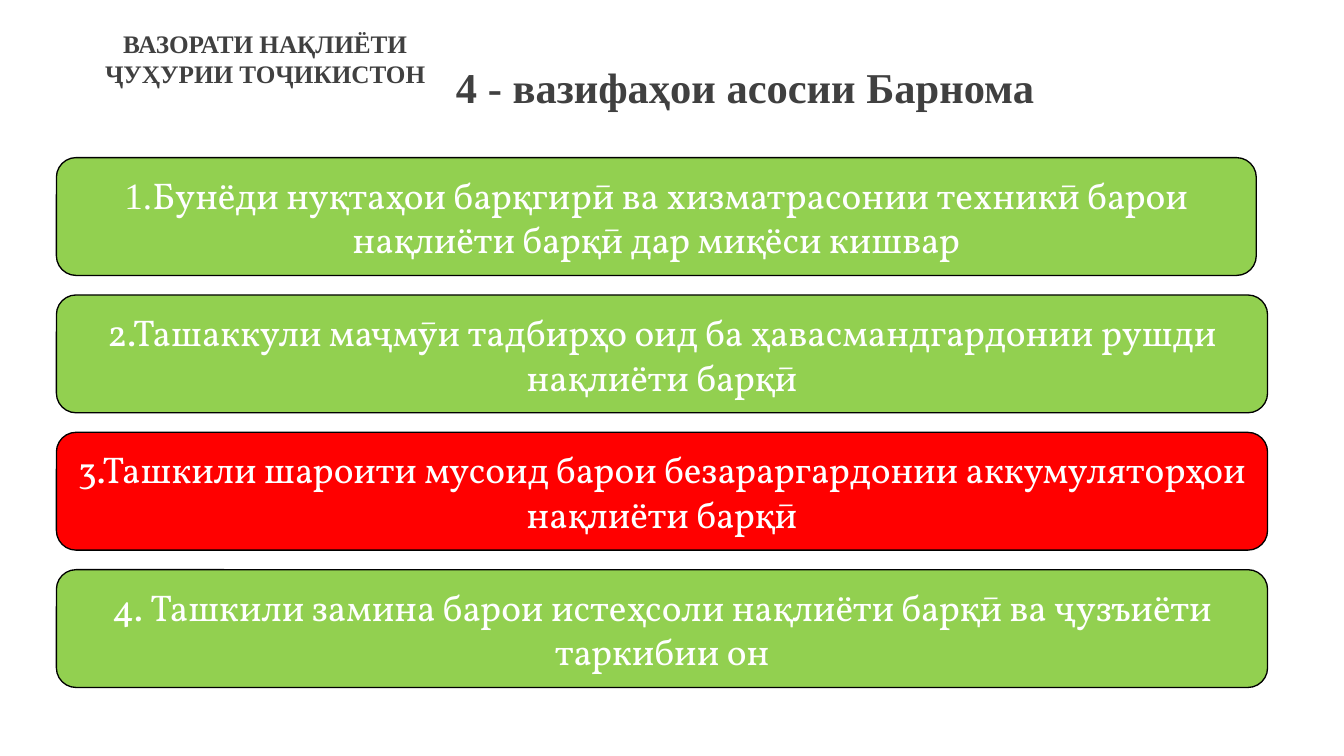
"""Build the slide listing the four main tasks of the programme."""
import pptx
import pptx.dml.color
import pptx.enum.shapes
import pptx.enum.text
import pptx.util

Cm = pptx.util.Cm
ALIGN = pptx.enum.text.PP_ALIGN
ANCHOR = pptx.enum.text.MSO_ANCHOR

SERIF, BODY = "Times New Roman", "Vollkorn"
COLORS = {"green": "92D050", "red": "FF0000", "line": "000000",
          "white": "FFFFFF", "heading": "404040"}

TITLE = [[("4 - вазифаҳои асосии Барнома", SERIF)]]
MINISTRY = [[("ВАЗОРАТИ НАҚЛИЁТИ", SERIF)], [("ҶУҲУРИИ ТОҶИКИСТОН", SERIF)]]
TASKS = [
    ("green", 31.88, [("1.", SERIF),
                      ("Бунёди нуқтаҳои барқгирӣ ва хизматрасонии техникӣ барои "
                       "нақлиёти барқӣ дар миқёси кишвар", BODY)]),
    ("green", 32.18, [("2.Ташаккули маҷмӯи тадбирҳо оид ба ҳавасмандгардонии рушди "
                       "нақлиёти барқӣ", BODY)]),
    ("red", 32.18, [("3.Ташкили шароити мусоид барои безараргардонии аккумуляторҳои "
                     "нақлиёти барқӣ", BODY)]),
    ("green", 32.18, [("4. Ташкили замина барои истеҳсоли нақлиёти барқӣ ва ҷузъиёти "
                       "таркибии он", BODY)]),
]
TASK_LEFT, TASK_TOP, TASK_HEIGHT, TASK_PITCH = 1.5, 4.19, 3.13, 3.65


def rgb(name):
    """Return the named colour."""
    return pptx.dml.color.RGBColor.from_string(COLORS[name])


def write(sp, paragraphs, size, color, bold=False, align=ALIGN.CENTER,
          anchor=ANCHOR.TOP):
    """Fill a shape with paragraphs made of (text, font) runs."""
    tf = sp.text_frame
    tf.word_wrap = True
    tf.auto_size = pptx.enum.text.MSO_AUTO_SIZE.NONE
    tf.vertical_anchor = anchor
    for i, runs in enumerate(paragraphs):
        p = tf.add_paragraph() if i else tf.paragraphs[0]
        p.alignment = align
        for text, font in runs:
            r = p.add_run()
            r.text = text
            r.font.name = font
            r.font.size = pptx.util.Pt(size)
            r.font.bold = bold
            r.font.color.rgb = rgb(color)


def add_task(s, top, width, fill, runs):
    """Add one rounded task bar."""
    sp = s.shapes.add_shape(pptx.enum.shapes.MSO_SHAPE.ROUNDED_RECTANGLE,
                            Cm(TASK_LEFT), Cm(top), Cm(width), Cm(TASK_HEIGHT))
    sp.shadow.inherit = False
    sp.fill.solid()
    sp.fill.fore_color.rgb = rgb(fill)
    sp.line.color.rgb = rgb("line")
    sp.line.width = pptx.util.Pt(1)
    write(sp, [runs], 28, "white", anchor=ANCHOR.MIDDLE)


def main():
    """Build and save the slide."""
    prs = pptx.Presentation()
    prs.slide_width, prs.slide_height = Cm(35.71), Cm(20.09)
    s = prs.slides.add_slide(prs.slide_layouts[5])

    title = s.shapes.title
    title.left, title.top, title.width, title.height = (
        Cm(11.86), Cm(1.5), Cm(21.13), Cm(1.63))
    write(title, TITLE, 32, "heading", bold=True, align=ALIGN.LEFT)

    ministry = s.shapes.add_textbox(Cm(2.64), Cm(0.74), Cm(8.81), Cm(1.63))
    tf = ministry.text_frame
    tf.margin_left = tf.margin_right = tf.margin_top = tf.margin_bottom = 0
    write(ministry, MINISTRY, 19, "heading", bold=True)

    for i, (fill, width, runs) in enumerate(TASKS):
        add_task(s, TASK_TOP + i * TASK_PITCH, width, fill, runs)

    prs.save("out.pptx")


if __name__ == "__main__":
    main()
